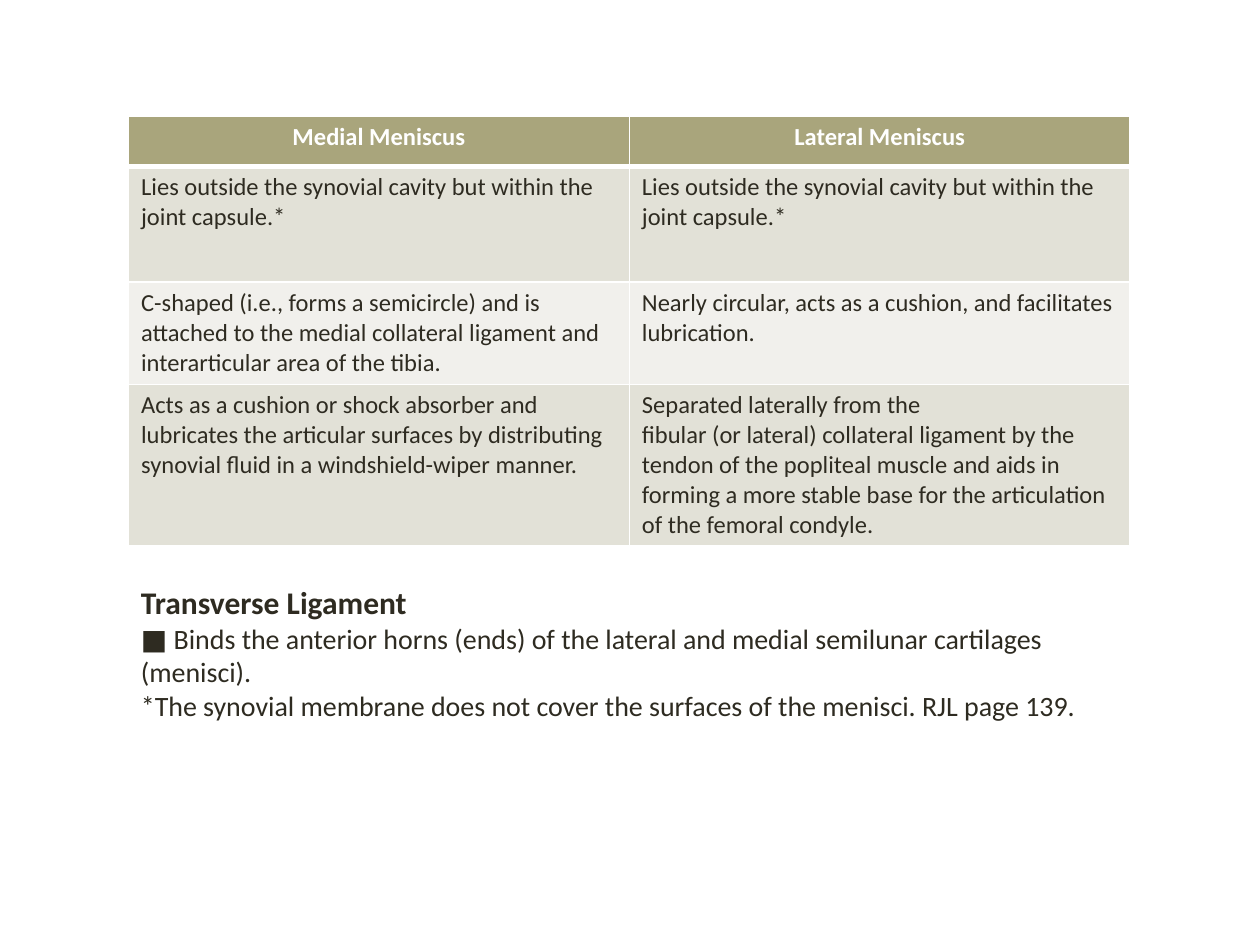
from dataclasses import dataclass

from lxml import etree
from pptx import Presentation
from pptx.dml.color import RGBColor
from pptx.enum.text import PP_ALIGN
from pptx.oxml.ns import qn
from pptx.util import Inches, Pt

CENTER = PP_ALIGN.CENTER
LEFT = PP_ALIGN.LEFT


@dataclass(frozen=True)
class Theme:
    font: str = "Calibri"
    ink: str = "2E2B21"
    white: str = "FFFFFF"
    header_fill: str = "A9A57C"
    band_fills: tuple = ("E2E1D7", "F1F0EC")
    cell_size: int = 14
    heading_size: int = 18
    note_size: int = 16
    thin_line: int = 1
    header_line: int = 3


THEME = Theme()
SLIDE_WIDTH, SLIDE_HEIGHT = 10, 7.5
CONTENT_LEFT, CONTENT_WIDTH = 1.02, 7.95
TABLE_TOP, NOTES_TOP, NOTES_HEIGHT = 0.92, 4.58, 1.51
ROW_HEIGHTS = (0.4, 0.92, 0.8, 1.27)

MENISCUS_ROWS = (
    ("Medial Meniscus", "Lateral Meniscus"),
    ("Lies outside the synovial cavity but within the joint capsule.*",) * 2,
    (
        "C-shaped (i.e., forms a semicircle) and is attached to the medial "
        "collateral ligament and interarticular area of the tibia.",
        "Nearly circular, acts as a cushion, and facilitates lubrication.",
    ),
    (
        "Acts as a cushion or shock absorber and lubricates the articular surfaces "
        "by distributing synovial fluid in a windshield-wiper manner.",
        "Separated laterally from the\n"
        "fibular (or lateral) collateral ligament by the tendon of the popliteal "
        "muscle and aids in forming a more stable base for the articulation of "
        "the femoral condyle.",
    ),
)
LIGAMENT_HEADING = "Transverse Ligament"
LIGAMENT_NOTES = (
    "■ Binds the anterior horns (ends) of the lateral and medial semilunar "
    "cartilages (menisci).",
    "*The synovial membrane does not cover the surfaces of the menisci. RJL page 139.",
)


def format_paragraph(paragraph, size, color=THEME.ink, bold=False, alignment=LEFT):
    paragraph.alignment = alignment
    font_format = {"name": THEME.font, "size": Pt(size), "bold": bold}
    for run in paragraph.runs:
        for name, value in font_format.items():
            setattr(run.font, name, value)
        run.font.color.rgb = RGBColor.from_string(color)


def set_borders(cell, widths):
    """Draw white borders; widths maps an edge letter (L, R, T, B) to points."""
    properties = cell._tc.get_or_add_tcPr()
    for position, (edge, width) in enumerate(widths.items()):
        line = etree.Element(qn(f"a:ln{edge}"), w=str(Pt(width)))
        fill = etree.SubElement(line, qn("a:solidFill"))
        etree.SubElement(fill, qn("a:srgbClr"), val=THEME.white)
        properties.insert(position, line)


def fill_cell(cell, text, row):
    is_header = row == 0
    cell.text = text
    cell.fill.solid()
    fill = THEME.header_fill if is_header else THEME.band_fills[(row - 1) % 2]
    cell.fill.fore_color.rgb = RGBColor.from_string(fill)
    widths = dict.fromkeys("LRTB", THEME.thin_line)
    if is_header:
        widths["B"] = THEME.header_line
    elif row == 1:
        widths["T"] = THEME.header_line
    set_borders(cell, widths)
    style = {"color": THEME.white, "bold": True, "alignment": CENTER} if is_header else {}
    for paragraph in cell.text_frame.paragraphs:
        format_paragraph(paragraph, THEME.cell_size, **style)


def add_meniscus_table(slide):
    column_count = len(MENISCUS_ROWS[0])
    table = slide.shapes.add_table(
        len(MENISCUS_ROWS), column_count,
        Inches(CONTENT_LEFT), Inches(TABLE_TOP),
        Inches(CONTENT_WIDTH), Inches(sum(ROW_HEIGHTS)),
    ).table
    table.horz_banding = False
    for column in table.columns:
        column.width = Inches(CONTENT_WIDTH / column_count)
    for row, (height, texts) in enumerate(zip(ROW_HEIGHTS, MENISCUS_ROWS)):
        table.rows[row].height = Inches(height)
        for column, text in enumerate(texts):
            fill_cell(table.cell(row, column), text, row)


def add_ligament_notes(slide):
    frame = slide.shapes.add_textbox(
        Inches(CONTENT_LEFT), Inches(NOTES_TOP),
        Inches(CONTENT_WIDTH), Inches(NOTES_HEIGHT),
    ).text_frame
    frame.word_wrap = True
    frame.text = "\n".join((LIGAMENT_HEADING, *LIGAMENT_NOTES))
    heading, *notes = frame.paragraphs
    format_paragraph(heading, THEME.heading_size, bold=True)
    for note in notes:
        format_paragraph(note, THEME.note_size)


def main():
    presentation = Presentation()
    presentation.slide_width = Inches(SLIDE_WIDTH)
    presentation.slide_height = Inches(SLIDE_HEIGHT)
    slide = presentation.slides.add_slide(presentation.slide_layouts[6])
    add_meniscus_table(slide)
    add_ligament_notes(slide)
    presentation.save("out.pptx")


if __name__ == "__main__":
    main()
